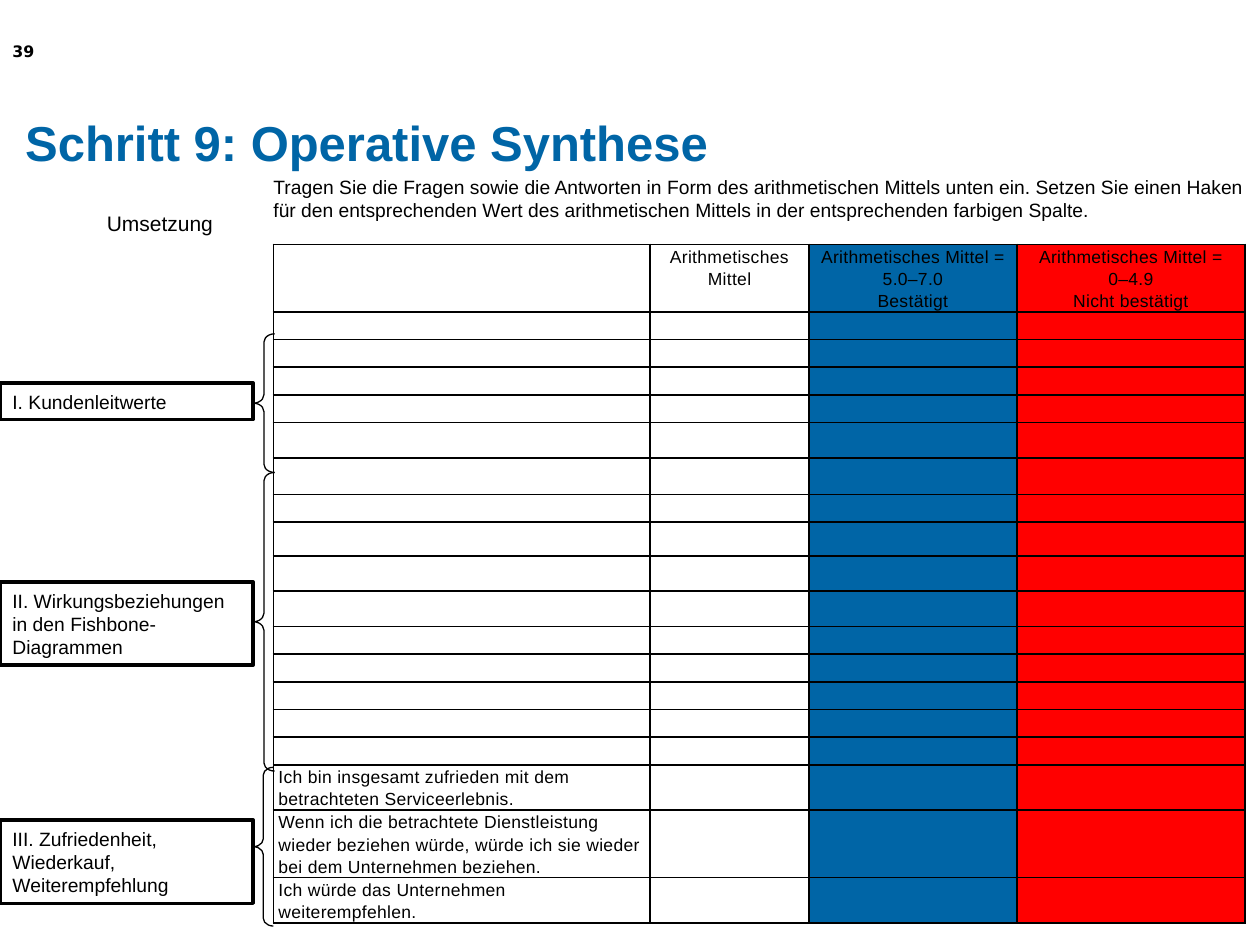
from dataclasses import dataclass

from lxml import etree
from pptx import Presentation
from pptx.dml.color import RGBColor
from pptx.enum.shapes import MSO_SHAPE
from pptx.enum.text import MSO_ANCHOR, PP_ALIGN
from pptx.oxml.ns import qn
from pptx.util import Inches, Pt

BRACE = MSO_SHAPE.LEFT_BRACE
RECTANGLE = MSO_SHAPE.RECTANGLE
TOP, MIDDLE = MSO_ANCHOR.TOP, MSO_ANCHOR.MIDDLE
LEFT, CENTER = PP_ALIGN.LEFT, PP_ALIGN.CENTER
COLORS = {"blue": "0065A6", "red": "FF0000", "black": "000000", "white": "FFFFFF"}


@dataclass
class Area:
    left: float
    top: float
    width: float
    height: float

    def lengths(self) -> list:
        return [Inches(v) for v in (self.left, self.top, self.width, self.height)]


@dataclass
class Style:
    size: float
    font: str = "Arial"
    color: str = "black"
    bold: bool = False


@dataclass
class Label:
    area: Area
    lines: list
    style: Style
    inset: bool = True
    wrap: bool = True
    anchor: int = TOP


@dataclass
class Section:
    box: Area
    brace: Area
    lines: list


def rgb(name: str) -> RGBColor:
    return RGBColor.from_string(COLORS[name])


def write_lines(frame, lines: list, style: Style, align=LEFT) -> None:
    for index, line in enumerate(lines):
        para = frame.paragraphs[0] if index == 0 else frame.add_paragraph()
        para.text = line
        para.alignment = align
        para.font.name = style.font
        para.font.size = Pt(style.size)
        para.font.bold = style.bold
        para.font.color.rgb = rgb(style.color)


def add_label(page, label: Label) -> None:
    frame = page.shapes.add_textbox(*label.area.lengths()).text_frame
    frame.word_wrap = label.wrap
    frame.vertical_anchor = label.anchor
    if not label.inset:
        frame.margin_left = frame.margin_right = 0
        frame.margin_top = frame.margin_bottom = 0
    write_lines(frame, label.lines, label.style)


def add_outlined(page, kind, area: Area, line_width: float):
    shape = page.shapes.add_shape(kind, *area.lengths())
    shape.shadow.inherit = False
    shape.line.color.rgb = rgb("black")
    shape.line.width = Pt(line_width)
    return shape


def add_section(page, section: Section) -> None:
    brace = add_outlined(page, BRACE, section.brace, 0.75)
    brace.fill.background()
    brace.adjustments[0] = 0.39

    box = add_outlined(page, RECTANGLE, section.box, 2)
    box.fill.solid()
    box.fill.fore_color.rgb = rgb("white")
    frame = box.text_frame
    frame.word_wrap = True
    frame.vertical_anchor = MIDDLE
    write_lines(frame, section.lines, Style(11))


def add_borders(cell) -> None:
    properties = cell._tc.get_or_add_tcPr()
    for side in ("a:lnL", "a:lnR", "a:lnT", "a:lnB"):
        border = etree.SubElement(properties, qn(side), w=str(Pt(1)))
        fill = etree.SubElement(border, qn("a:solidFill"))
        etree.SubElement(fill, qn("a:srgbClr"), val=COLORS["black"])


def fill_cell(cell, lines: list, color, align) -> None:
    add_borders(cell)
    if color:
        cell.fill.solid()
        cell.fill.fore_color.rgb = rgb(color)
    else:
        cell.fill.background()
    cell.margin_left = cell.margin_right = Inches(0.04)
    cell.margin_top = cell.margin_bottom = 0
    write_lines(cell.text_frame, lines, Style(10), align)
    for para in cell.text_frame.paragraphs:
        para.line_spacing = Pt(12.8)
        for span in para.runs:
            span._r.get_or_add_rPr().set("spc", "20")


def add_survey_table(page, area: Area, widths: list, heights: list,
                     header: list, questions: dict, fills: list) -> None:
    frame = page.shapes.add_table(len(heights), len(widths), *area.lengths())
    table = frame.table
    table.first_row = table.horz_banding = False
    for column, width in zip(table.columns, widths):
        column.width = Inches(width)
    for r, height in enumerate(heights):
        table.rows[r].height = Inches(height)
        row = header if r == 0 else [[questions.get(r, "")], [""], [""], [""]]
        for c, lines in enumerate(row):
            fill_cell(table.cell(r, c), lines, fills[c], CENTER if r == 0 else LEFT)


LABELS = [
    Label(Area(0.2, 0.84, 9.61, 0.57), ["Schritt 9: Operative Synthese"],
          Style(28, color="blue", bold=True), inset=False, anchor=MIDDLE),
    Label(Area(2.17, 1.39, 7.72, 0.39),
          ["Tragen Sie die Fragen sowie die Antworten in Form des arithmetischen "
           "Mittels unten ein. Setzen Sie einen Haken für den entsprechenden Wert des "
           "arithmetischen Mittels in der entsprechenden farbigen Spalte."],
          Style(11), inset=False),
    Label(Area(0, 0.28, 0.79, 0.47), ["39"], Style(9, "DejaVu Sans", bold=True)),
    Label(Area(0.75, 1.62, 1.1, 0.3), ["Umsetzung"], Style(12), wrap=False),
]

COLUMN_WIDTHS = [2.99, 1.26, 1.65, 1.81]
COLUMN_FILLS = [None, None, "blue", "red"]
ROW_HEIGHTS = ([0.53] + [0.22] * 4 + [0.28, 0.29, 0.22, 0.27, 0.28, 0.28]
               + [0.22] * 5 + [0.36, 0.53, 0.36])
HEADER = [
    [""],
    ["Arithmetisches Mittel"],
    ["Arithmetisches Mittel =", "5.0–7.0", "Bestätigt"],
    ["Arithmetisches Mittel =", "0–4.9", "Nicht bestätigt"],
]
QUESTIONS = {
    16: "Ich bin insgesamt zufrieden mit dem betrachteten Serviceerlebnis.",
    17: "Wenn ich die betrachtete Dienstleistung wieder beziehen würde, "
        "würde ich sie wieder bei dem Unternehmen beziehen.",
    18: "Ich würde das Unternehmen weiterempfehlen.",
}

SECTIONS = [
    Section(Area(0, 3.04, 2.01, 0.29), Area(2.01, 2.65, 0.17, 1.1),
            ["I. Kundenleitwerte"]),
    Section(Area(0, 4.62, 2.01, 0.66), Area(2.01, 3.75, 0.17, 2.37),
            ["II. Wirkungsbeziehungen in den Fishbone-Diagrammen"]),
    Section(Area(0, 6.51, 2.01, 0.66), Area(2.01, 6.09, 0.16, 1.26),
            ["III. Zufriedenheit,", "Wiederkauf,", "Weiterempfehlung"]),
]


def main() -> None:
    deck = Presentation()
    deck.slide_width, deck.slide_height = Inches(10), Inches(7.5)
    page = deck.slides.add_slide(deck.slide_layouts[6])

    # Title, instructions, page number and caption
    for label in LABELS:
        add_label(page, label)

    # Survey table
    add_survey_table(page, Area(2.17, 1.94, sum(COLUMN_WIDTHS), sum(ROW_HEIGHTS)),
                     COLUMN_WIDTHS, ROW_HEIGHTS, HEADER, QUESTIONS, COLUMN_FILLS)

    # Row groups with braces
    for section in SECTIONS:
        add_section(page, section)

    deck.save("out.pptx")


if __name__ == "__main__":
    main()
